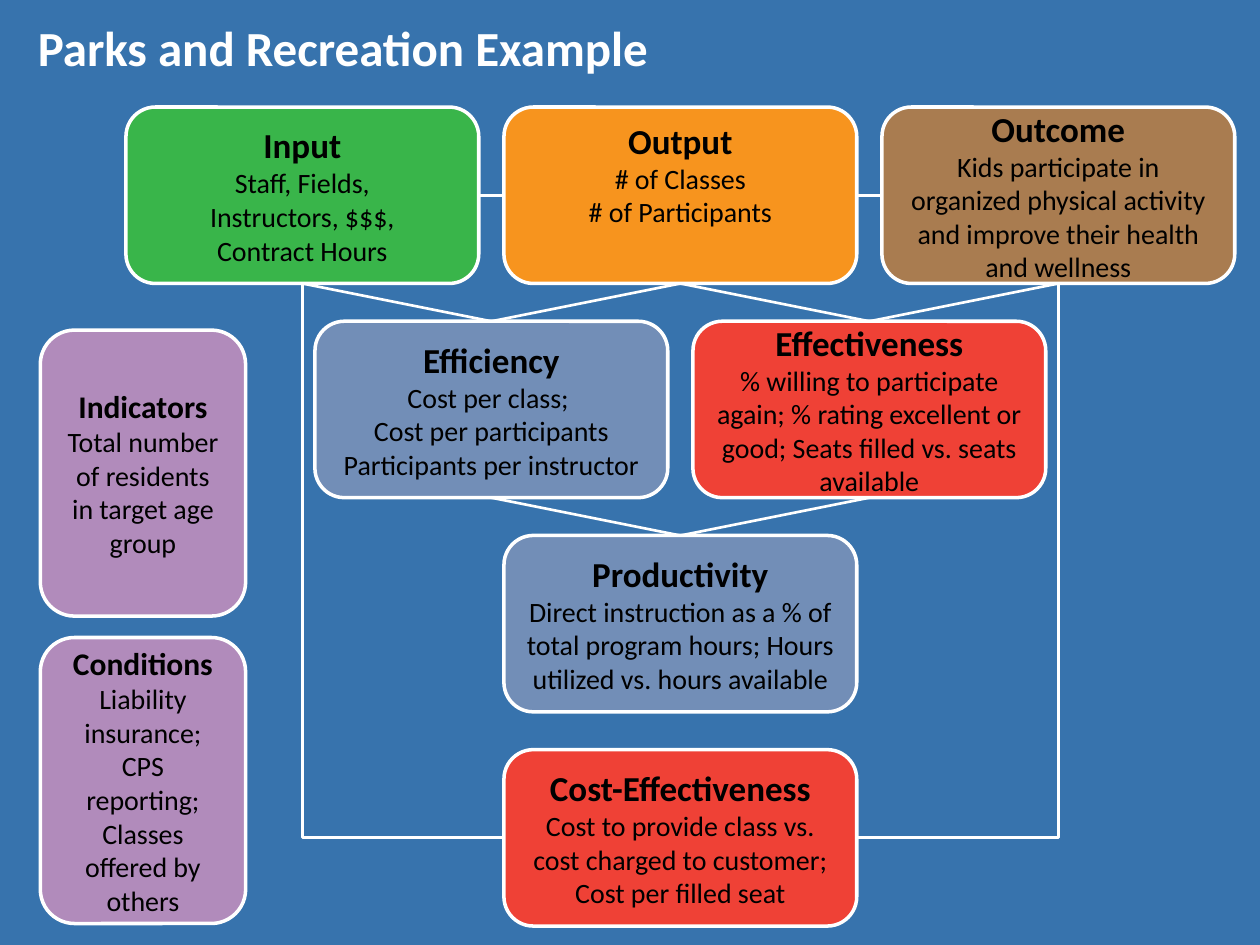
"""Build the parks and recreation performance measure slide."""
from lxml import etree
from pptx import Presentation
from pptx.dml.color import RGBColor
from pptx.enum.shapes import MSO_CONNECTOR as Link, MSO_SHAPE as Preset
from pptx.enum.text import MSO_ANCHOR as Anchor, PP_ALIGN as Align
from pptx.oxml.ns import qn
from pptx.util import Inches, Pt

TOP, LEFT, BOTTOM, RIGHT = range(4)
GREEN, ORANGE, BROWN = "39B54A", "F7941E", "A97C50"
BLUE, RED, PURPLE = "728EB7", "EF4136", "B18BBB"
BOX_W, BOX_H, COLUMN_STEP, ROW_STEP = 2.8, 1.4, 1.5, 1.7
SIDE_W, SIDE_H = 1.63, 2.27


def color(hex_value):
    return RGBColor.from_string(hex_value)


def apply(target, values):
    for name, value in values.items():
        setattr(target, name, value)


class MeasureSlide:
    """Holds the slide and the style of its elements."""

    font = "Calibri"
    white, black = "FFFFFF", "000000"

    def __init__(self, deck, background):
        self.slide = deck.slides.add_slide(deck.slide_layouts[5])
        fill = self.slide.background.fill
        fill.solid()
        fill.fore_color.rgb = color(background)

    def add_text(self, paragraph, text, size, hex_value, bold, align):
        paragraph.alignment = align
        run = paragraph.add_run()
        run.text = text
        apply(run.font, {"name": self.font, "size": Pt(size), "bold": bold})
        run.font.color.rgb = color(hex_value)

    def title(self, text, left, top, width, height):
        heading = self.slide.shapes.title
        apply(heading, {"left": Inches(left), "top": Inches(top),
                        "width": Inches(width), "height": Inches(height)})
        apply(heading.text_frame, {"vertical_anchor": Anchor.MIDDLE, "word_wrap": True})
        self.add_text(heading.text_frame.paragraphs[0], text, 28, self.white, True, Align.LEFT)

    def box(self, left, top, width, height, fill, heading, details,
            heading_size=20, bottom_inset=0.05):
        measure = self.slide.shapes.add_shape(
            Preset.ROUNDED_RECTANGLE, *map(Inches, (left, top, width, height)))
        measure.shadow.inherit = False
        measure.fill.solid()
        measure.fill.fore_color.rgb = color(fill)
        measure.line.color.rgb = color(self.white)
        measure.line.width = Pt(2)
        frame = measure.text_frame
        apply(frame, {"word_wrap": True, "vertical_anchor": Anchor.MIDDLE,
                      "margin_bottom": Inches(bottom_inset)})
        self.add_text(frame.paragraphs[0], heading, heading_size, self.black, True, Align.CENTER)
        for detail in details:
            self.add_text(frame.add_paragraph(), detail, 16, self.black, False, Align.CENTER)
        return measure

    def connect(self, start, start_side, end, end_side, bent=False):
        link = self.slide.shapes.add_connector(
            Link.ELBOW if bent else Link.STRAIGHT, 0, 0, 0, 0)
        link.begin_connect(start, start_side)
        link.end_connect(end, end_side)
        link.line.color.rgb = color(self.white)
        link.line.width = Pt(1.5)
        properties = link._element.spPr
        if bent:
            properties.find(qn("a:prstGeom")).set("prst", "bentConnector2")
        etree.SubElement(properties, qn("a:effectLst"))


def main():
    deck = Presentation()
    apply(deck, {"slide_width": Inches(10), "slide_height": Inches(7.5)})
    page = MeasureSlide(deck, "3773AD")
    page.title("Parks and Recreation Example", 0.2, 0, 9, 0.75)

    measures = [
        (0, 0, GREEN, "Input",
         ["Staff, Fields,", "Instructors, $$$,", "Contract Hours"]),
        (2, 0, ORANGE, "Output", ["# of Classes", "# of Participants"]),
        (4, 0, BROWN, "Outcome",
         ["Kids participate in organized physical activity and improve their "
          "health and wellness"]),
        (1, 1, BLUE, "Efficiency",
         ["Cost per class; ", "Cost per participants", "Participants per instructor"]),
        (2, 2, BLUE, "Productivity",
         ["Direct instruction as a % of total program hours; Hours utilized vs. "
          "hours available"]),
        (3, 1, RED, "Effectiveness",
         ["% willing to participate again; % rating excellent or good; "
          "Seats filled vs. seats available"]),
        (2, 3, RED, "Cost-Effectiveness",
         ["Cost to provide class vs. cost charged to customer;", "Cost per filled seat"]),
    ]
    boxes = {}
    for column, row, fill, heading, details in measures:
        boxes[heading] = page.box(
            1 + column * COLUMN_STEP, 0.85 + row * ROW_STEP, BOX_W, BOX_H,
            fill, heading, details,
            bottom_inset=0.39 if heading == "Output" else 0.05)

    for upper, lower in [
        ("Input", "Efficiency"), ("Output", "Efficiency"),
        ("Output", "Effectiveness"), ("Outcome", "Effectiveness"),
        ("Efficiency", "Productivity"), ("Effectiveness", "Productivity"),
    ]:
        page.connect(boxes[upper], BOTTOM, boxes[lower], TOP)
    for side, result in [(RIGHT, "Outcome"), (LEFT, "Input")]:
        page.connect(boxes["Cost-Effectiveness"], side, boxes[result], BOTTOM, bent=True)
    for before, after in [("Input", "Output"), ("Output", "Outcome")]:
        page.connect(boxes[before], RIGHT, boxes[after], LEFT)

    for top, heading, detail in [
        (2.62, "Indicators", "Total number of residents in target age group"),
        (5.06, "Conditions",
         "Liability insurance; CPS reporting; Classes offered by others"),
    ]:
        page.box(0.32, top, SIDE_W, SIDE_H, PURPLE, heading, [detail], heading_size=18)

    deck.save("out.pptx")


if __name__ == "__main__":
    main()
